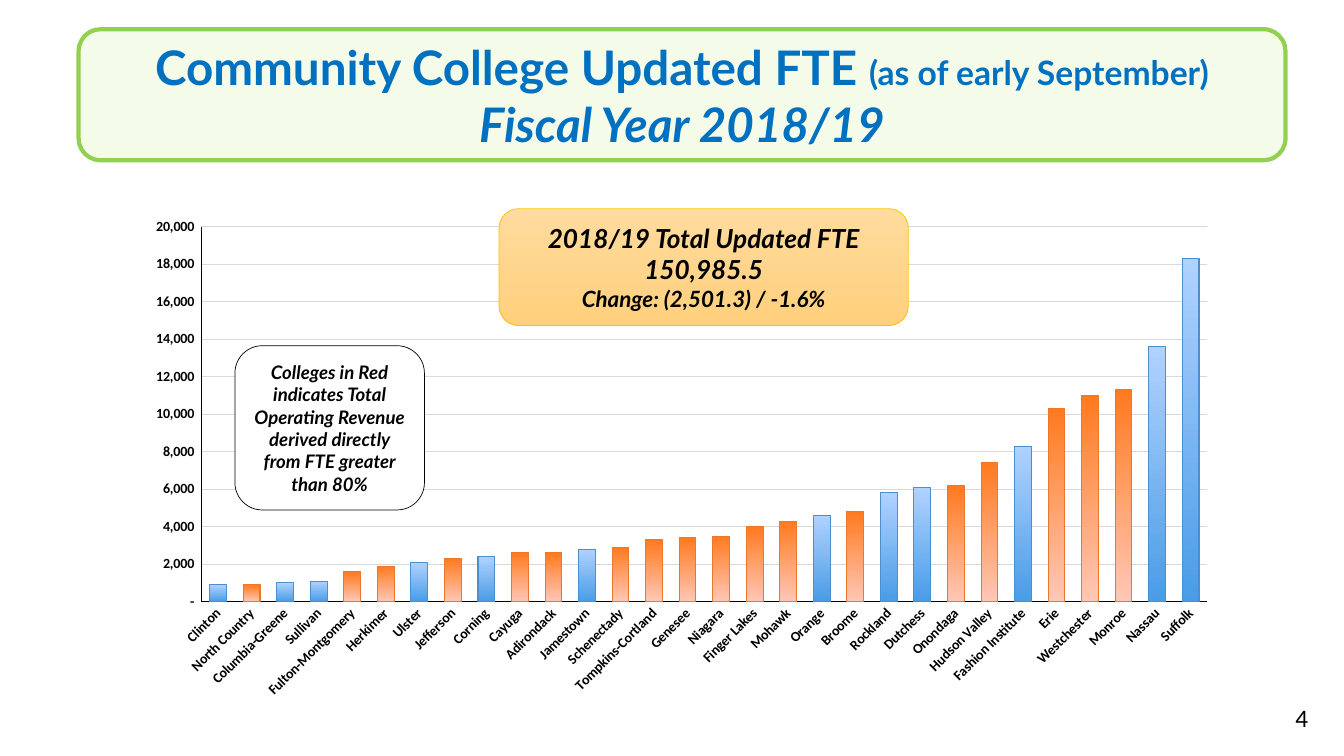
import pptx
import pptx.chart.data
import pptx.dml.color
import pptx.enum.chart
import pptx.enum.shapes
import pptx.enum.text
import pptx.oxml
import pptx.util
from pptx.util import Inches

ENROLLMENT = {
    "Clinton": 900, "North Country": 900, "Columbia-Greene": 1000,
    "Sullivan": 1100, "Fulton-Montgomery": 1600, "Herkimer": 1900,
    "Ulster": 2100, "Jefferson": 2300, "Corning": 2400, "Cayuga": 2600,
    "Adirondack": 2600, "Jamestown": 2800, "Schenectady": 2900,
    "Tompkins-Cortland": 3300, "Genesee": 3400, "Niagara": 3500,
    "Finger Lakes": 4000, "Mohawk": 4300, "Orange": 4600, "Broome": 4800,
    "Rockland": 5800, "Dutchess": 6100, "Onondaga": 6200,
    "Hudson Valley": 7400, "Fashion Institute": 8300, "Erie": 10300,
    "Westchester": 11000, "Monroe": 11300, "Nassau": 13600, "Suffolk": 18300,
}
BLUE_COLLEGES = {
    "Clinton", "Columbia-Greene", "Sullivan", "Ulster", "Corning", "Jamestown",
    "Orange", "Rockland", "Dutchess", "Fashion Institute", "Nassau", "Suffolk",
}
PLOT_LAYOUT = {"x": 0.059, "y": 0.036, "w": 0.924, "h": 0.744}
COUNT_FORMAT = '_(* #,##0_);_(* \\(#,##0\\);_(* "-"_);_(@_)'


def color(value):
    return pptx.dml.color.RGBColor.from_string(value)


class SlideBuilder:
    """Hold the shared style and the current slide, and add elements to it."""

    heading_font = "Lato"
    body_font = "Calibri"
    ink = "000000"

    def __init__(self, presentation):
        self.slide = presentation.slides.add_slide(presentation.slide_layouts[6])

    def style_font(self, font, name, size, ink, bold=False, italic=False):
        font.name = name
        font.size = pptx.util.Pt(size)
        font.color.rgb = color(ink)
        font.bold = bold
        font.italic = italic

    def paint(self, fill, paint):
        if isinstance(paint, str):
            fill.solid()
            fill.fore_color.rgb = color(paint)
            return
        fill.gradient()
        fill.gradient_angle = 270
        for stop, shade in zip(fill.gradient_stops, paint):
            stop.color.rgb = color(shade)

    def outline(self, line, ink, width):
        line.color.rgb = color(ink)
        line.width = pptx.util.Pt(width)

    def panel(self, box, paint, border, width, paragraphs, ink="000000"):
        panel = self.slide.shapes.add_shape(
            pptx.enum.shapes.MSO_SHAPE.ROUNDED_RECTANGLE, *map(Inches, box))
        panel.shadow.inherit = False
        self.paint(panel.fill, paint)
        self.outline(panel.line, border, width)
        frame = panel.text_frame
        frame.word_wrap = True
        frame.vertical_anchor = pptx.enum.text.MSO_ANCHOR.MIDDLE
        for index, runs in enumerate(paragraphs):
            paragraph = frame.add_paragraph() if index else frame.paragraphs[0]
            paragraph.alignment = pptx.enum.text.PP_ALIGN.CENTER
            for text, size, italic in runs:
                run = paragraph.add_run()
                run.text = text
                self.style_font(run.font, self.heading_font, size, ink, True, italic)

    def page_number(self, box, number):
        frame = self.slide.shapes.add_textbox(*map(Inches, box)).text_frame
        frame.word_wrap = True
        run = frame.paragraphs[0].add_run()
        run.text = number
        self.style_font(run.font, self.body_font, 18, self.ink)

    def style_axis(self, axis):
        axis.major_tick_mark = pptx.enum.chart.XL_TICK_MARK.NONE
        axis.minor_tick_mark = pptx.enum.chart.XL_TICK_MARK.NONE
        self.style_font(axis.tick_labels.font, self.body_font, 10, self.ink, True)
        self.outline(axis.format.line, self.ink, 0.75)

    def place_plot(self, area):
        modes = '<c:layoutTarget val="inner"/><c:xMode val="edge"/><c:yMode val="edge"/>'
        sizes = "".join(f'<c:{key} val="{share}"/>' for key, share in PLOT_LAYOUT.items())
        layout = pptx.oxml.parse_xml(
            '<c:layout xmlns:c="http://schemas.openxmlformats.org/drawingml/2006/chart">'
            f"<c:manualLayout>{modes}{sizes}</c:manualLayout></c:layout>")
        for previous in area.xpath("c:layout"):
            area.remove(previous)
        area.insert(0, layout)

    def column_chart(self, box, counts, highlighted):
        data = pptx.chart.data.CategoryChartData()
        data.categories = list(counts)
        data.add_series("Series 1", list(counts.values()))
        chart = self.slide.shapes.add_chart(
            pptx.enum.chart.XL_CHART_TYPE.COLUMN_CLUSTERED,
            *map(Inches, box), data).chart
        chart.has_title = False
        chart.has_legend = False
        self.style_font(chart.font, self.body_font, 10, self.ink, True)
        area = chart.element.xpath("c:chart/c:plotArea")[0]
        self.place_plot(area)

        colleges, fte = chart.category_axis, chart.value_axis
        for axis in (colleges, fte):
            self.style_axis(axis)
        area.xpath("c:catAx/c:txPr/a:bodyPr")[0].set("rot", "-2700000")
        fte.minimum_scale, fte.maximum_scale, fte.major_unit = 0, 20000, 2000
        fte.tick_labels.number_format = COUNT_FORMAT
        fte.tick_labels.number_format_is_linked = False
        self.outline(fte.major_gridlines.format.line, "D9D9D9", 0.75)

        plot = chart.plots[0]
        plot.gap_width, plot.overlap = 100, -24
        plot.vary_by_categories = False
        series = plot.series[0]
        self.paint(series.format.fill, ("FF7A1F", "FFC7B6"))
        self.outline(series.format.line, "EC792B", 0.75)
        for index, college in enumerate(counts):
            if college in highlighted:
                bar = series.points[index].format
                self.paint(bar.fill, ("B0D2FF", "499CE7"))
                self.outline(bar.line, "4A90D0", 0.75)


def main():
    presentation = pptx.Presentation()
    presentation.slide_width = Inches(13.33)
    presentation.slide_height = Inches(7.5)
    builder = SlideBuilder(presentation)

    builder.column_chart((1.36, 2.07, 10.8, 5), ENROLLMENT, BLUE_COLLEGES)
    builder.panel(
        (0.78, 0.29, 11.97, 1.3), "F5FBE9", "92D050", 3,
        [[("Community College Updated FTE ", 34, False),
          ("(as of early September) ", 24, False),
          ("Fiscal Year 2018/19", 34, True)]], "0070C0")
    builder.panel(
        (2.33, 3.43, 1.88, 1.63), "FFFFFF", "000000", 0.5,
        [[("Colleges in Red indicates Total Operating Revenue derived "
           "directly from FTE greater than 80%", 13.3, True)]])
    builder.panel(
        (4.95, 2.07, 4.06, 1.16), ("FFDB9E", "FFD07C"), "FFC000", 0.5,
        [[("2018/19 Total Updated FTE 150,985.5", 18.7, True)],
         [("Change: (2,501.3) / -1.6%", 16, True)]])
    builder.page_number((12.75, 6.92, 0.26, 0.4), "4")
    presentation.save("out.pptx")


if __name__ == "__main__":
    main()
